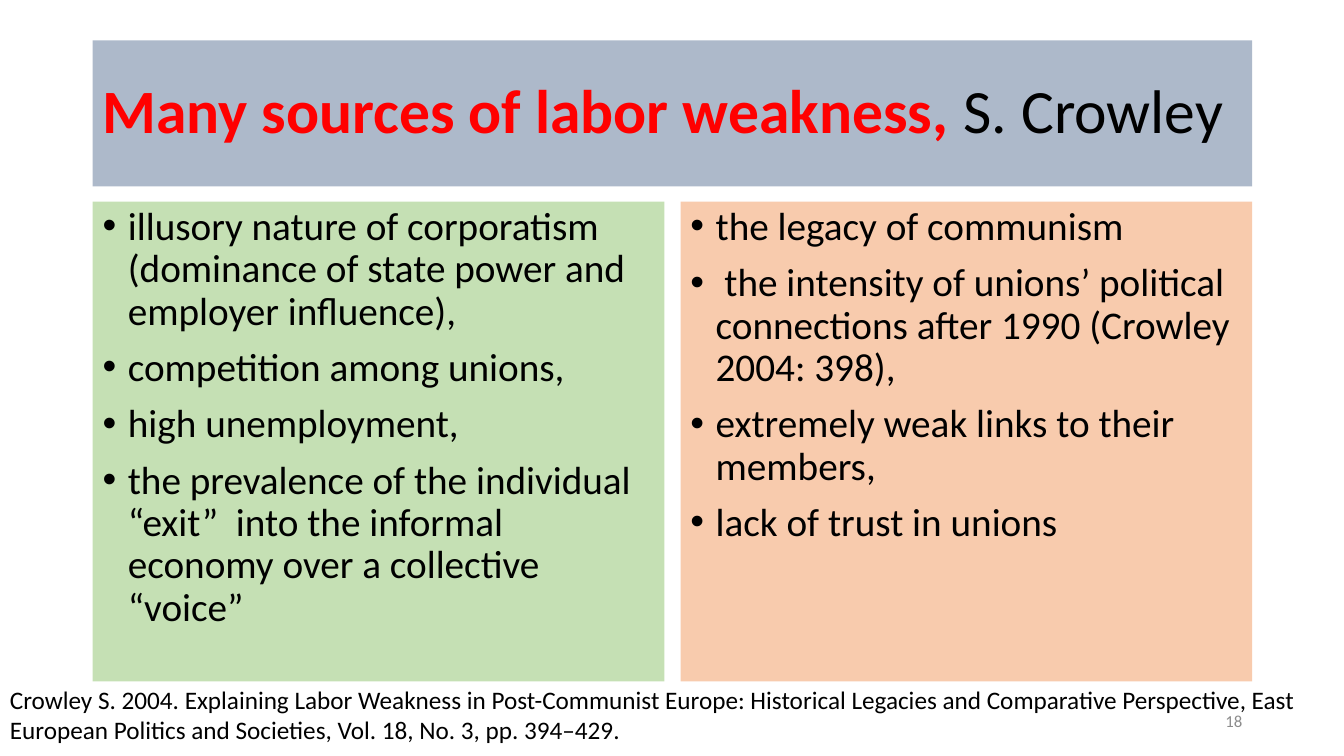
from dataclasses import dataclass

from lxml.etree import SubElement
from pptx import Presentation
from pptx.dml.color import RGBColor as RGB
from pptx.enum.shapes import MSO_SHAPE as Kind
from pptx.enum.text import MSO_ANCHOR as Anchor, PP_ALIGN as Align
from pptx.oxml.ns import qn
from pptx.shapes.autoshape import Shape
from pptx.slide import Slide
from pptx.util import Inches, Pt


@dataclass(frozen=True)
class Theme:
    font: str = "Calibri"
    ink: str = "000000"
    accent: str = "FF0000"
    muted: str = "8C8C8C"
    band: str = "ADB9CA"
    green: str = "C5E0B4"
    peach: str = "F8CBAD"
    title: int = 44
    body: int = 28
    note: int = 18
    small: int = 12


@dataclass(frozen=True)
class Grid:
    wide: float = 13.33
    high: float = 7.5
    left: float = 0.92
    gap: float = 0.16
    col: float = 5.67

    def x(self, col: int) -> float:
        return self.left + col * (self.col + self.gap)

    def span(self, cols: int) -> float:
        return cols * self.col + (cols - 1) * self.gap


@dataclass(frozen=True)
class Box:
    left: float
    top: float
    width: float
    height: float


@dataclass(frozen=True)
class Run:
    text: str
    size: int
    color: str
    bold: bool = False


@dataclass(frozen=True)
class Para:
    runs: tuple[Run, ...]
    align: Align = Align.LEFT
    spacing: float = 1.0
    bullet: bool = False


@dataclass(frozen=True)
class Panel:
    fill: str
    points: tuple[str, ...]


THEME = Theme()
GRID = Grid()

PANELS = (
    Panel(THEME.green, (
        "illusory nature of corporatism (dominance of state power and employer influence),",
        "competition among unions,",
        "high unemployment,",
        "the prevalence of the individual “exit”  into the informal economy "
        "over a collective “voice”",
    )),
    Panel(THEME.peach, (
        "the legacy of communism",
        " the intensity of unions’ political connections after 1990 (Crowley 2004: 398),",
        "extremely weak links to their members,",
        "lack of trust in unions",
    )),
)
SOURCE = (
    "Crowley S. 2004. Explaining Labor Weakness in Post-Communist Europe: "
    "Historical Legacies and Comparative Perspective, East European Politics "
    "and Societies, Vol. 18, No. 3, pp. 394–429."
)


def write(shape: Shape, paras: list[Para], anchor: Anchor = Anchor.TOP) -> None:
    frame = shape.text_frame
    frame.word_wrap = True
    frame.vertical_anchor = anchor
    for i, para in enumerate(paras):
        line = frame.paragraphs[0] if i == 0 else frame.add_paragraph()
        line.alignment = para.align
        line.line_spacing = para.spacing
        if para.bullet:
            line.space_before = Pt(10)
            props = line._p.get_or_add_pPr()
            props.set("marL", str(Inches(0.25)))
            props.set("indent", str(Inches(-0.25)))
            SubElement(props, qn("a:buFont")).set("typeface", "Arial")
            SubElement(props, qn("a:buChar")).set("char", "•")
        for part in para.runs:
            run = line.add_run()
            run.text = part.text
            run.font.name = THEME.font
            run.font.size = Pt(part.size)
            run.font.bold = part.bold
            run.font.color.rgb = RGB.from_string(part.color)


def place(box: Box) -> tuple[Inches, ...]:
    return tuple(Inches(n) for n in (box.left, box.top, box.width, box.height))


def block(slide: Slide, box: Box, fill: str, paras: list[Para],
          anchor: Anchor = Anchor.TOP) -> None:
    """Draw a filled rectangle without outline that holds text."""
    shape = slide.shapes.add_shape(Kind.RECTANGLE, *place(box))
    shape.shadow.inherit = False
    shape.fill.solid()
    shape.fill.fore_color.rgb = RGB.from_string(fill)
    shape.line.fill.background()
    write(shape, paras, anchor)


def label(slide: Slide, box: Box, para: Para, anchor: Anchor = Anchor.TOP) -> None:
    write(slide.shapes.add_textbox(*place(box)), [para], anchor)


def main() -> None:
    deck = Presentation()
    deck.slide_width = Inches(GRID.wide)
    deck.slide_height = Inches(GRID.high)
    slide = deck.slides.add_slide(deck.slide_layouts[6])

    title = Para((
        Run("Many sources of labor weakness, ", THEME.title, THEME.accent, True),
        Run("S. Crowley", THEME.title, THEME.ink),
    ), spacing=0.9)
    block(slide, Box(GRID.left, 0.4, GRID.span(2), 1.45), THEME.band,
          [title], Anchor.MIDDLE)

    for col, panel in enumerate(PANELS):
        paras = [Para((Run(point, THEME.body, THEME.ink),), spacing=0.9, bullet=True)
                 for point in panel.points]
        block(slide, Box(GRID.x(col), 2, GRID.span(1), 4.76), panel.fill, paras)

    label(slide, Box(0, 6.74, GRID.wide, 0.71),
          Para((Run(SOURCE, THEME.note, THEME.ink),)))
    right = GRID.left + GRID.span(2)
    label(slide, Box(right - 3, 6.95, 3, 0.4),
          Para((Run("18", THEME.small, THEME.muted),), Align.RIGHT), Anchor.MIDDLE)

    deck.save("out.pptx")


if __name__ == "__main__":
    main()
